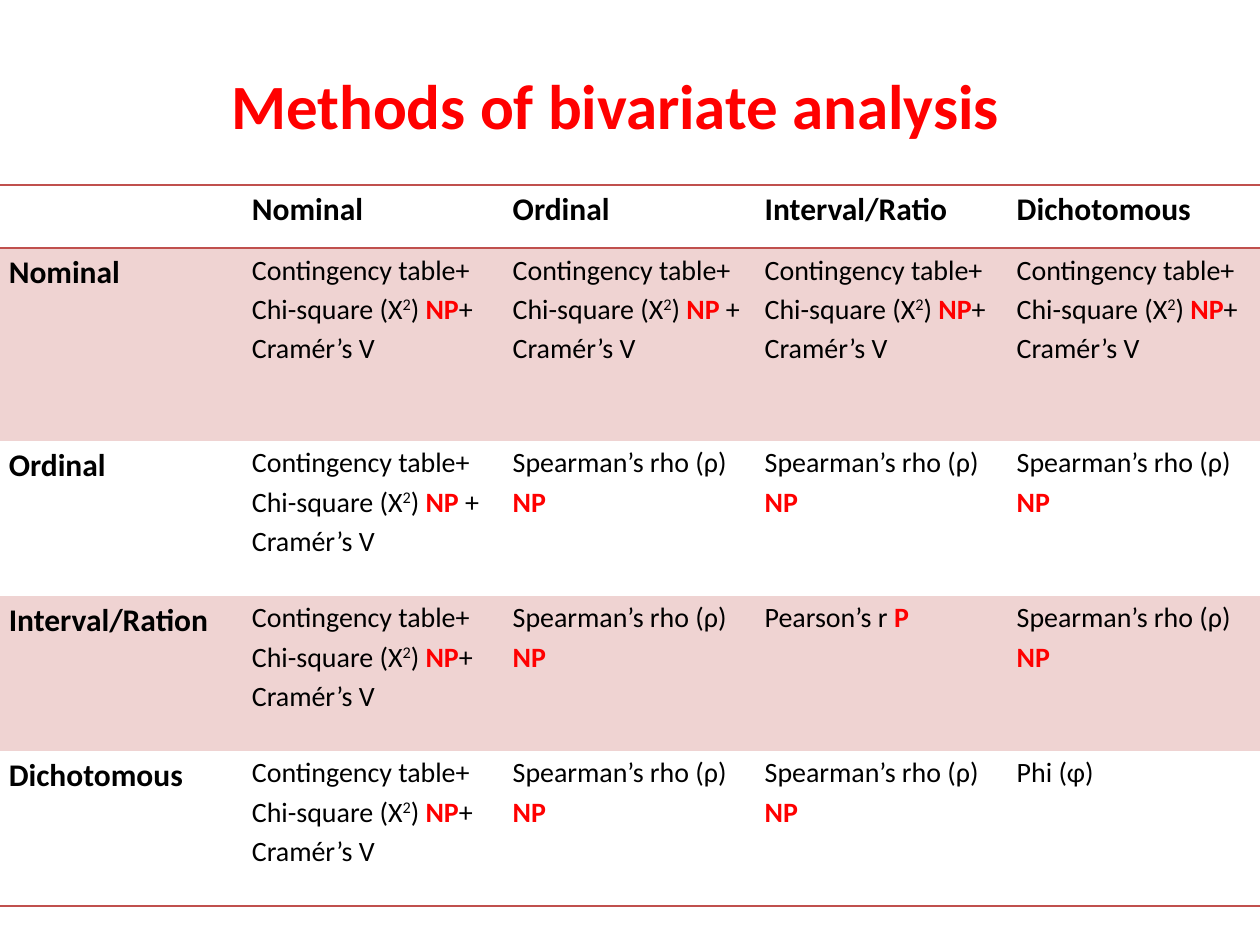
from lxml.etree import SubElement
from pptx import Presentation
from pptx.dml.color import RGBColor
from pptx.enum.text import MSO_ANCHOR, PP_ALIGN
from pptx.oxml.ns import qn
from pptx.util import Inches, Pt

COLORS = {"text": "000000", "accent": "FF0000", "band": "EFD3D2", "rule": "C0504D"}
FONT = "Calibri"
SLIDE_WIDTH, SLIDE_HEIGHT = 10, 7.5
COLUMN_WIDTHS = [1.93, 2.07, 2, 2, 2]
ROW_HEIGHTS = [0.5, 1.53, 1.23, 1.23, 1.23]
TABLE_TOP = 1.47
HEADINGS = ["Nominal", "Ordinal", "Interval/Ratio", "Dichotomous"]


def contingency(label="NP"):
    return [
        [("Contingency table+", "plain")],
        [("Chi-square (X", "plain"), ("2", "super"), (") ", "plain"),
         (label, "mark"), ("+", "plain")],
        [("Cramér’s V", "plain")],
    ]


def measure(name, label=""):
    marked = [(label, "mark")] if label else []
    return [[(name, "plain")] + marked]


def method_rows():
    spearman = measure("Spearman’s rho (ρ) ", "NP")
    pearson = measure("Pearson’s r ", "P")
    return [
        ("Nominal", [contingency(), contingency("NP "), contingency(), contingency()]),
        ("Ordinal", [contingency("NP "), spearman, spearman, spearman]),
        ("Interval/Ration", [contingency(), spearman, pearson, spearman]),
        ("Dichotomous", [contingency(), spearman, spearman, measure("Phi (φ)")]),
    ]


def add_run(paragraph, text, size, style):
    run = paragraph.add_run()
    run.text = text
    run.font.name = FONT
    run.font.size = Pt(size)
    run.font.bold = style in ("mark", "heading")
    color = COLORS["accent" if style == "mark" else "text"]
    run.font.color.rgb = RGBColor.from_string(color)
    if style == "super":
        run.font._element.set("baseline", "30000")


def write_cell(cell, lines, size):
    cell.margin_left = cell.margin_right = Inches(0.07)
    cell.margin_top = cell.margin_bottom = 0
    frame = cell.text_frame
    for index, line in enumerate(lines):
        paragraph = frame.add_paragraph() if index else frame.paragraphs[0]
        paragraph.line_spacing = 1.15
        for text, style in line:
            add_run(paragraph, text, size, style)


def draw_borders(cell, ruled_sides):
    properties = cell._tc.get_or_add_tcPr()
    for position, side in enumerate("LRTB"):
        border = SubElement(properties, qn(f"a:ln{side}"))
        if side in ruled_sides:
            border.set("w", str(Pt(1)))
            fill = SubElement(border, qn("a:solidFill"))
            SubElement(fill, qn("a:srgbClr")).set("val", COLORS["rule"])
        else:
            border.set("w", "0")
            SubElement(border, qn("a:noFill"))
        properties.insert(position, border)


def style_rows(table):
    last = len(ROW_HEIGHTS) - 1
    ruled = {0: "TB", 1: "T", last: "B"}
    for index, row in enumerate(table.rows):
        for cell in row.cells:
            if index % 2:
                cell.fill.solid()
                cell.fill.fore_color.rgb = RGBColor.from_string(COLORS["band"])
            else:
                cell.fill.background()
            draw_borders(cell, ruled.get(index, ""))


def add_title(slide, text):
    box = slide.shapes.add_textbox(Inches(0.27), Inches(0.5), Inches(9.23), Inches(0.65))
    frame = box.text_frame
    frame.word_wrap = True
    frame.vertical_anchor = MSO_ANCHOR.MIDDLE
    paragraph = frame.paragraphs[0]
    paragraph.alignment = PP_ALIGN.CENTER
    add_run(paragraph, text, 36, "mark")


def add_methods_table(slide):
    table = slide.shapes.add_table(
        len(ROW_HEIGHTS), len(COLUMN_WIDTHS), 0, Inches(TABLE_TOP),
        Inches(SLIDE_WIDTH), Inches(sum(ROW_HEIGHTS))).table
    table.first_row = table.horz_banding = False
    for column, width in zip(table.columns, COLUMN_WIDTHS):
        column.width = Inches(width)
    for row, height in zip(table.rows, ROW_HEIGHTS):
        row.height = Inches(height)
    for column, heading in enumerate(HEADINGS, 1):
        write_cell(table.cell(0, column), [[(heading, "heading")]], 18)
    for row, (heading, methods) in enumerate(method_rows(), 1):
        write_cell(table.cell(row, 0), [[(heading, "heading")]], 18)
        for column, lines in enumerate(methods, 1):
            write_cell(table.cell(row, column), lines, 16)
    style_rows(table)


def main():
    presentation = Presentation()
    presentation.slide_width = Inches(SLIDE_WIDTH)
    presentation.slide_height = Inches(SLIDE_HEIGHT)
    slide = presentation.slides.add_slide(presentation.slide_layouts[6])
    add_title(slide, "Methods of bivariate analysis")
    add_methods_table(slide)
    presentation.save("out.pptx")


if __name__ == "__main__":
    main()
